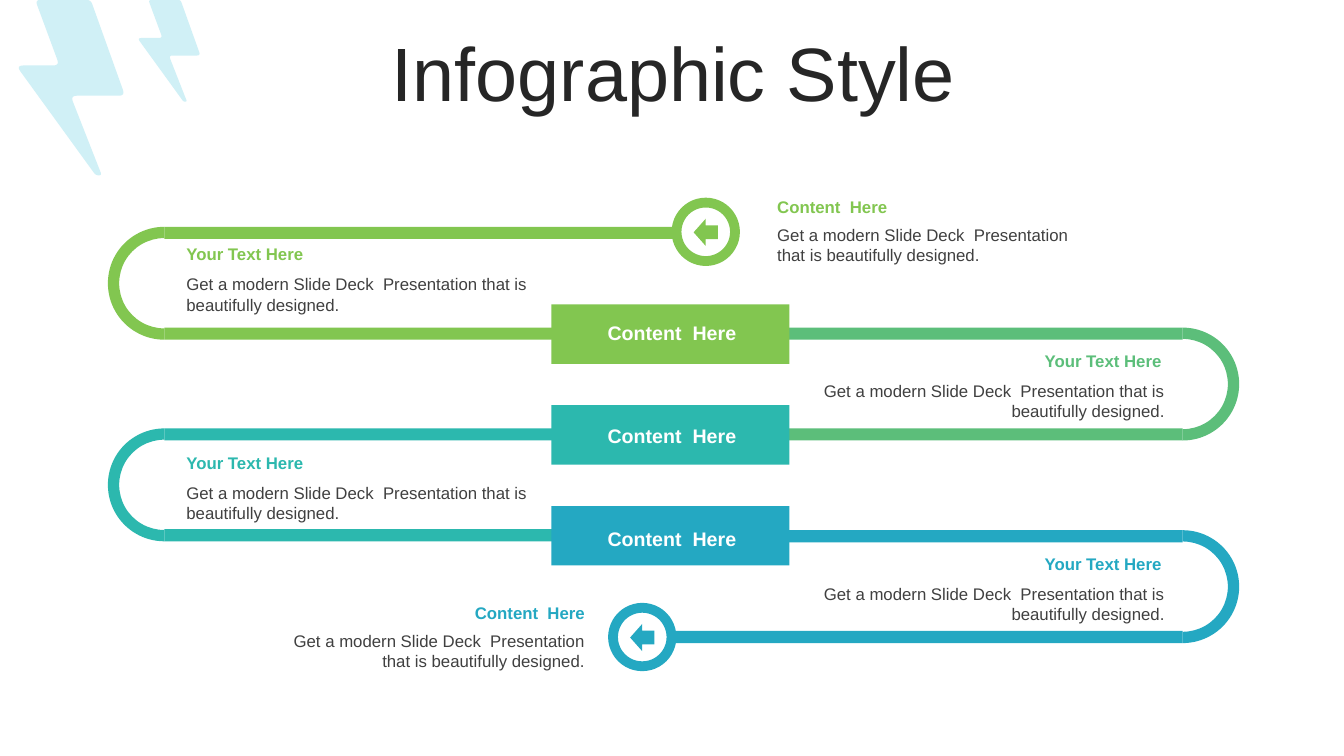
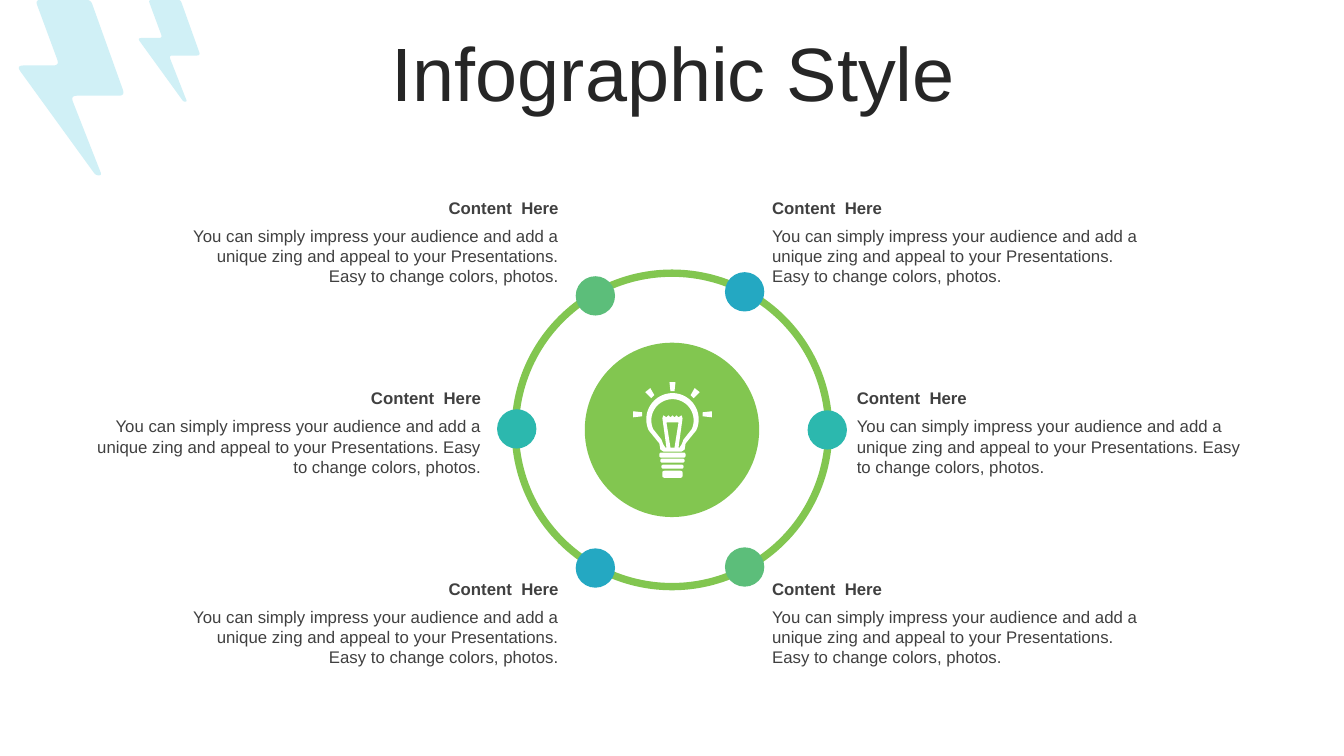
from math import cos, dist, radians, sin

from pptx import Presentation
from pptx.dml.color import RGBColor
from pptx.enum.shapes import MSO_SHAPE
from pptx.enum.text import MSO_ANCHOR, PP_ALIGN
from pptx.util import Inches, Pt

GREEN, MINT, TEAL, BLUE = "82C650", "5CBE7A", "2CB8AE", "24A8C2"
PALE, INK, GREY, WHITE = "D0F0F6", "262626", "404040", "FFFFFF"
LEFT, RIGHT, CENTER = PP_ALIGN.LEFT, PP_ALIGN.RIGHT, PP_ALIGN.CENTER
RAIL, ARC, PITCH = 0.12, 1.12, 1.0

# Corners of a bolt: x, y and how far the corner is cut back
BOLT = [(0.16, 0, 0.05), (0.71, 0, 0.04), (1.05, 0.95, 0.06),
        (0.51, 0.95, 0.06), (0.82, 1.74, 0.03), (0.76, 1.74, 0.03),
        (-0.03, 0.65, 0.07), (0.4, 0.65, 0.06)]


def color(code):
    return RGBColor.from_string(code)


def soften(corners):
    """Turn (x, y, cut) corners into points along a rounded outline."""
    points = []
    for i, (x, y, cut) in enumerate(corners):
        ends = []
        for other in (corners[i - 1], corners[(i + 1) % len(corners)]):
            part = cut / dist((x, y), other[:2])
            ends.append((x + (other[0] - x) * part, y + (other[1] - y) * part))
        (ax, ay), (bx, by) = ends
        for t in (0, 0.25, 0.5, 0.75, 1):
            a, c, b = (1 - t) ** 2, 2 * t * (1 - t), t ** 2
            points.append((a * ax + c * x + b * bx, a * ay + c * y + b * by))
    return points


def flip(points):
    return [(-x, y) for x, y in points]


def whole(half):
    """Complete a right half with its mirror image."""
    return half + flip(half)[::-1]


def dome(y, r):
    """Right side of the glass, from the top down to the neck."""
    turns = [radians(a) for a in range(-90, 26, 5)]
    return [(r * cos(a), y + r * sin(a)) for a in turns]


def bulb():
    """Outlines of a light bulb, centred on x = 0."""
    glass = dome(0.37, 0.26) + [(0.13, 0.61), (0.12, 0.67), (0.09, 0.69)]
    hollow = dome(0.38, 0.21) + [
        (0.11, 0.57), (0.09, 0.62), (0.07, 0.65), (0.06, 0.65), (0.1, 0.36),
        (0.09, 0.33), (0.06, 0.35), (0.04, 0.33), (0.02, 0.35), (0, 0.33)]
    wire = [(0, 0.4), (0.06, 0.4), (0.02, 0.65)]
    beam = [(0.03, 0), (0.02, 0.09)]
    parts = [whole(half) for half in (glass, hollow, wire, beam)]
    for ray in ([(0.22, 0.06), (0.27, 0.1), (0.21, 0.16), (0.18, 0.13)],
                [(0.39, 0.29), (0.39, 0.35), (0.3, 0.34), (0.3, 0.3)]):
        parts += [ray, flip(ray)]
    for half, top, end in ((0.13, 0.7, 0.75), (0.12, 0.76, 0.8),
                           (0.11, 0.82, 0.86), (0.1, 0.88, 0.95)):
        parts.append(soften([(-half, top, 0.02), (half, top, 0.02),
                             (half, end, 0.02), (-half, end, 0.02)]))
    return parts


class Deck:
    def __init__(self):
        self.file = Presentation()
        self.file.slide_width = Inches(13.33)
        self.file.slide_height = Inches(7.5)

    def start(self, title):
        """Add a slide with the bolts and its title."""
        self.slide = self.file.slides.add_slide(self.file.slide_layouts[6])
        self.shapes = self.slide.shapes
        for left, size in ((0.19, 1), (1.38, 0.58)):
            self.outline([soften(BOLT)], left, 0, PALE, size)
        self.text(0.35, 0.37, 12.66, 0.79, title, INK, CENTER, 54,
                  anchor=MSO_ANCHOR.MIDDLE, lead=0.9)

    def paint(self, shape, fill=None, line=None, width=0):
        shape.shadow.inherit = False
        if fill:
            shape.fill.solid()
            shape.fill.fore_color.rgb = color(fill)
        else:
            shape.fill.background()
        if line:
            shape.line.color.rgb = color(line)
            shape.line.width = Pt(width)
        else:
            shape.line.fill.background()

    def shape(self, kind, x, y, w, h, fill=None, line=None, width=0):
        box = (Inches(v) for v in (x, y, w, h))
        shape = self.shapes.add_shape(kind, *box)
        self.paint(shape, fill, line, width)
        return shape

    def rect(self, x, y, w, h, fill):
        self.shape(MSO_SHAPE.RECTANGLE, x, y, w, h, fill)

    def disc(self, x, y, size, fill=None, line=None, width=0):
        self.shape(MSO_SHAPE.OVAL, x, y, size, size, fill, line, width)

    def outline(self, parts, left, top, fill, size=1):
        """Draw closed outlines as one shape; inner ones are holes."""
        pen = None
        for part in parts:
            first, *rest = [(Inches(left + x * size), Inches(top + y * size))
                            for x, y in part]
            if pen:
                pen.move_to(*first)
            else:
                pen = self.shapes.build_freeform(*first, scale=1.0)
            pen.add_line_segments(rest, close=True)
        self.paint(pen.convert_to_shape(), fill)

    def text(self, x, y, w, h, words, ink, align=LEFT, size=12, bold=False,
             anchor=MSO_ANCHOR.TOP, lead=None):
        box = self.shapes.add_textbox(*(Inches(v) for v in (x, y, w, h)))
        frame = box.text_frame
        frame.word_wrap = True
        frame.vertical_anchor = anchor
        line = frame.paragraphs[0]
        line.text = words
        line.alignment = align
        line.line_spacing = lead
        line.font.name = "Arial"
        line.font.size = Pt(size)
        line.font.bold = bold
        line.font.color.rgb = color(ink)

    def note(self, x, y, w, head, body, ink, align, gap=0.28, trim=0):
        """Place a bold heading over body text; trim narrows the heading."""
        self.text(x, y, w - trim, 0.3, head, ink, align, bold=True)
        self.text(x, y + gap, w, 0.5, body, GREY, align)

    def loop(self, side, top, ink, upper, lower):
        """Bend a band at one side; its rails end at upper and lower."""
        left = side == LEFT
        bend = self.shape(MSO_SHAPE.BLOCK_ARC, 1.07 if left else 11.17, top,
                          ARC, ARC, ink)
        angles = (54, 162) if left else (162, 54)
        for i, value in enumerate((*angles, 0.1)):
            bend.adjustments[i] = value
        turn = 1.63 if left else 11.73
        for y, end in ((top, upper), (top + PITCH, lower)):
            self.rect(min(turn, end), y, abs(end - turn), RAIL, ink)

    def badge(self, x, y, ink):
        self.disc(x, y, 0.58, line=ink, width=7)
        self.shape(MSO_SHAPE.LEFT_ARROW, x + 0.17, y + 0.16, 0.24, 0.27, ink)


def path_slide(deck):
    deck.start("Infographic Style")
    for side, top, ink, upper, lower in (
            (LEFT, 2.25, GREEN, 6.68, 5.57), (LEFT, 4.25, TEAL, 5.57, 5.57),
            (RIGHT, 3.25, MINT, 7.8, 7.8), (RIGHT, 5.26, BLUE, 7.8, 6.64)):
        deck.loop(side, top, ink, upper, lower)
    for i, ink in enumerate((GREEN, TEAL, BLUE)):
        deck.rect(5.47, 3.02 + i * PITCH, 2.36, 0.59, ink)
        deck.text(5.72, 3.13 + i * 1.02, 1.89, 0.34, "Content  Here", WHITE,
                  CENTER, 14, True, MSO_ANCHOR.MIDDLE)
    deck.badge(6.71, 2.01, GREEN)
    deck.badge(6.08, 6.03, BLUE)
    body = ("Get a modern Slide Deck  Presentation that is beautifully "
            "designed.")
    for x, y, ink, align in (
            (1.75, 2.37, GREEN, LEFT), (1.75, 4.44, TEAL, LEFT),
            (8.06, 3.43, MINT, RIGHT), (8.06, 5.44, BLUE, RIGHT)):
        deck.note(x, y, 3.59, "Your Text Here", body, ink, align, 0.3, 0.03)
    for x, y, ink, align in ((2.68, 5.93, BLUE, RIGHT),
                             (7.61, 1.9, GREEN, LEFT)):
        deck.note(x, y, 3.22, "Content  Here", body, ink, align)


def ring_slide(deck):
    deck.start("Infographic Style")
    deck.disc(5.8, 3.4, 1.73, GREEN)
    deck.disc(5.11, 2.71, 3.11, line=GREEN, width=5.25)
    for x, y, ink in ((7.19, 2.7, BLUE), (7.19, 5.43, MINT),
                      (8.01, 4.07, TEAL), (5.71, 2.74, MINT),
                      (5.71, 5.44, BLUE), (4.93, 4.06, TEAL)):
        deck.disc(x, y, 0.39, ink)
    body = ("You can simply impress your audience and add a unique zing and "
            "appeal to your Presentations. Easy to change colors, photos.")
    for y, near, far, w in ((1.91, 7.56, 1.74, 3.9), (3.8, 8.4, 0.79, 4.08),
                            (5.69, 7.56, 1.74, 3.9)):
        for x, align in ((near, LEFT), (far, RIGHT)):
            deck.note(x, y, w, "Content  Here", body, GREY, align)
    deck.outline(bulb(), 6.67, 3.79, WHITE)


def main():
    deck = Deck()
    path_slide(deck)
    ring_slide(deck)
    deck.file.save("out.pptx")


if __name__ == "__main__":
    main()
